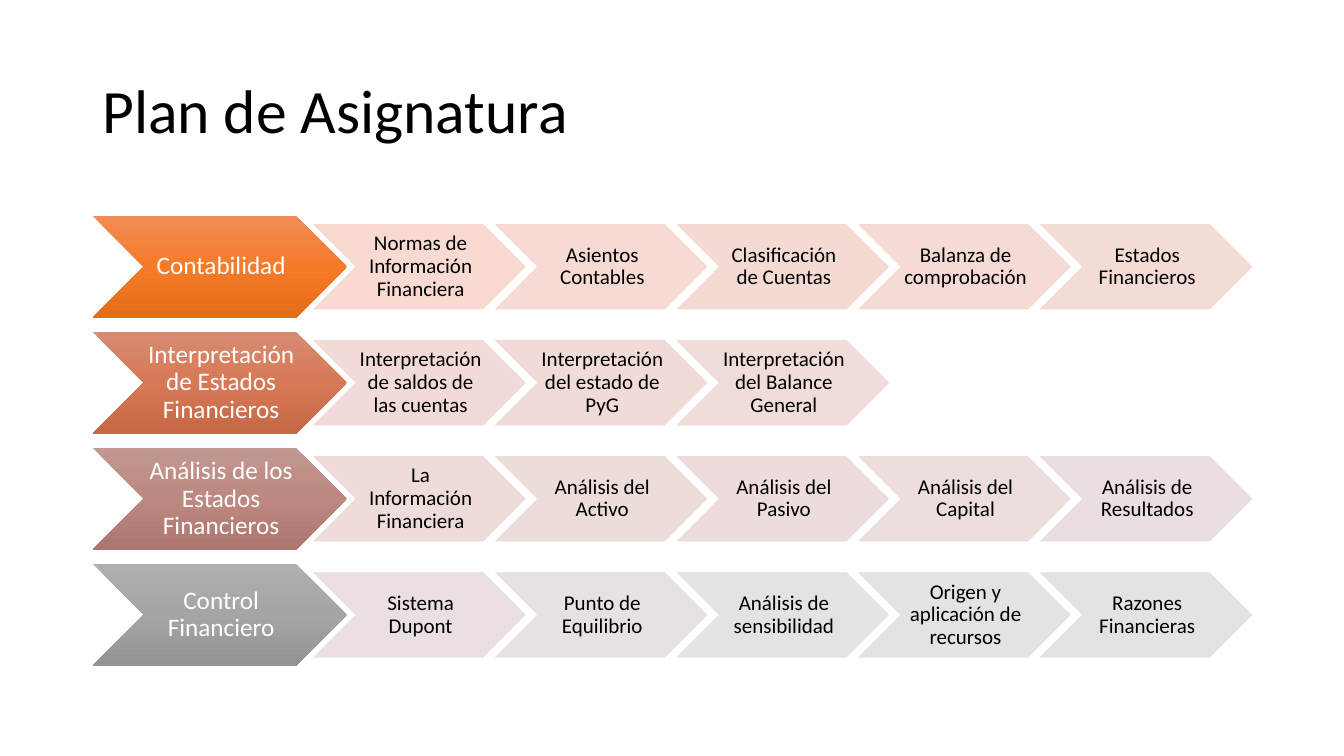
from copy import deepcopy
from dataclasses import dataclass

from lxml import etree
from pptx import Presentation
from pptx.dml.color import RGBColor
from pptx.enum.shapes import MSO_SHAPE
from pptx.enum.text import MSO_ANCHOR, PP_ALIGN
from pptx.oxml.ns import qn
from pptx.util import Pt

CHEVRON = MSO_SHAPE.CHEVRON
MIDDLE = MSO_ANCHOR.MIDDLE
LEFT, CENTER = PP_ALIGN.LEFT, PP_ALIGN.CENTER


@dataclass(frozen=True)
class Theme:
    """Typeface, type sizes and colours of the slide."""

    font: str = "Calibri"
    title_size: int = 44
    unit_size: int = 18
    topic_size: int = 15
    dark: str = "000000"
    light: str = "FFFFFF"
    topic_opacity: int = 90
    unit_gradients: tuple = (
        ("F18C57", "F67B28", "E56C19"),
        ("D78B72", "D77956", "C66846"),
        ("C19791", "BC8880", "AA766E"),
        ("AFAFAF", "A5A5A5", "939393"),
    )
    topic_colors: tuple = (
        ("F8D7CE", "F7D7CF", "F5D7D0", "F4D7D1", "F3D8D2"),
        ("F1D8D3", "F0D8D4", "EFD9D5"),
        ("EDD9D6", "ECDAD7", "EBDAD9", "E9DBDA", "E8DCDB"),
        ("E7DDDC", "E5DEDD", "E4DFDE", "E2E0E0", "E1E1E1"),
    )


THEME = Theme()

COURSE_PLAN = (
    ("Contabilidad",
     ("Normas de Información Financiera", "Asientos Contables",
      "Clasificación de Cuentas", "Balanza de comprobación",
      "Estados Financieros")),
    ("Interpretación de Estados Financieros",
     ("Interpretación de saldos de las cuentas",
      "Interpretación del estado de PyG",
      "Interpretación del Balance General")),
    ("Análisis de los Estados Financieros",
     ("La Información Financiera", "Análisis del Activo",
      "Análisis del Pasivo", "Análisis del Capital",
      "Análisis de Resultados")),
    ("Control Financiero",
     ("Sistema Dupont", "Punto de Equilibrio", "Análisis de sensibilidad",
      "Origen y aplicación de recursos", "Razones Financieras")),
)

PLAN_LEFT, PLAN_TOP, ROW_PITCH = 66.3, 154.2, 82.9
UNIT_HEIGHT, TOPIC_HEIGHT = 72.6, 60.4
CHEVRON_RATIO = 2.5
TOPICS_LEFT, TOPIC_PITCH = 224.2, 129.75


def write_text(shape, text, size, color, align):
    """Write one paragraph, vertically centred, into a shape."""
    frame = shape.text_frame
    frame.word_wrap = True
    frame.vertical_anchor = MIDDLE
    paragraph = frame.paragraphs[0]
    paragraph.alignment = align
    paragraph.line_spacing = 0.9
    run = paragraph.add_run()
    run.text = text
    run.font.name = THEME.font
    run.font.size = Pt(size)
    run.font.color.rgb = RGBColor.from_string(color)


def add_title(slide, text):
    """Add the slide heading."""
    title = slide.shapes.add_textbox(Pt(66), Pt(28.75), Pt(828), Pt(104.4))
    write_text(title, text, THEME.title_size, THEME.dark, LEFT)


def add_chevron(slide, left, top, height, text, size, color):
    """Add a chevron with centred text and return it."""
    chevron = slide.shapes.add_shape(
        CHEVRON, Pt(left), Pt(top), Pt(height * CHEVRON_RATIO), Pt(height))
    chevron.shadow.inherit = False
    frame = chevron.text_frame
    frame.margin_left = Pt(size / 10)
    frame.margin_right = 0
    frame.margin_top = frame.margin_bottom = Pt(size / 20)
    write_text(chevron, text, size, color, CENTER)
    return chevron


def fill_gradient(shape, colors):
    """Fill a shape from top to bottom through three colours."""
    shape.line.fill.background()
    shape.fill.gradient()
    shape.fill.gradient_angle = 270
    stop_list = next(shape.element.iter(qn("a:gsLst")))
    middle_stop = deepcopy(stop_list[0])
    middle_stop.set("pos", "50000")
    stop_list.insert(1, middle_stop)
    for stop, color in zip(shape.fill.gradient_stops, colors):
        stop.color.rgb = RGBColor.from_string(color)


def fill_translucent(shape, color):
    """Give a shape the same translucent colour in fill and outline."""
    shape.fill.solid()
    shape.line.width = Pt(0.5)
    for paint in (shape.fill.fore_color, shape.line.color):
        paint.rgb = RGBColor.from_string(color)
    for tint in shape.element.spPr.iter(qn("a:srgbClr")):
        alpha = etree.SubElement(tint, qn("a:alpha"))
        alpha.set("val", str(THEME.topic_opacity * 1000))


def add_unit_row(slide, top, unit, topics, gradient, topic_colors):
    """Add one course unit followed by its topics."""
    unit_chevron = add_chevron(slide, PLAN_LEFT, top, UNIT_HEIGHT, unit,
                               THEME.unit_size, THEME.light)
    fill_gradient(unit_chevron, gradient)
    topic_top = top + (UNIT_HEIGHT - TOPIC_HEIGHT) / 2
    for column, (topic, color) in enumerate(zip(topics, topic_colors)):
        topic_chevron = add_chevron(
            slide, TOPICS_LEFT + column * TOPIC_PITCH, topic_top,
            TOPIC_HEIGHT, topic, THEME.topic_size, THEME.dark)
        fill_translucent(topic_chevron, color)


def main():
    """Build the course plan slide and save it."""
    presentation = Presentation()
    presentation.slide_width, presentation.slide_height = Pt(960), Pt(540)
    slide = presentation.slides.add_slide(presentation.slide_layouts[6])
    add_title(slide, "Plan de Asignatura")
    rows = zip(COURSE_PLAN, THEME.unit_gradients, THEME.topic_colors)
    for row, ((unit, topics), gradient, topic_colors) in enumerate(rows):
        add_unit_row(slide, PLAN_TOP + row * ROW_PITCH, unit, topics,
                     gradient, topic_colors)
    presentation.save("out.pptx")


if __name__ == "__main__":
    main()
